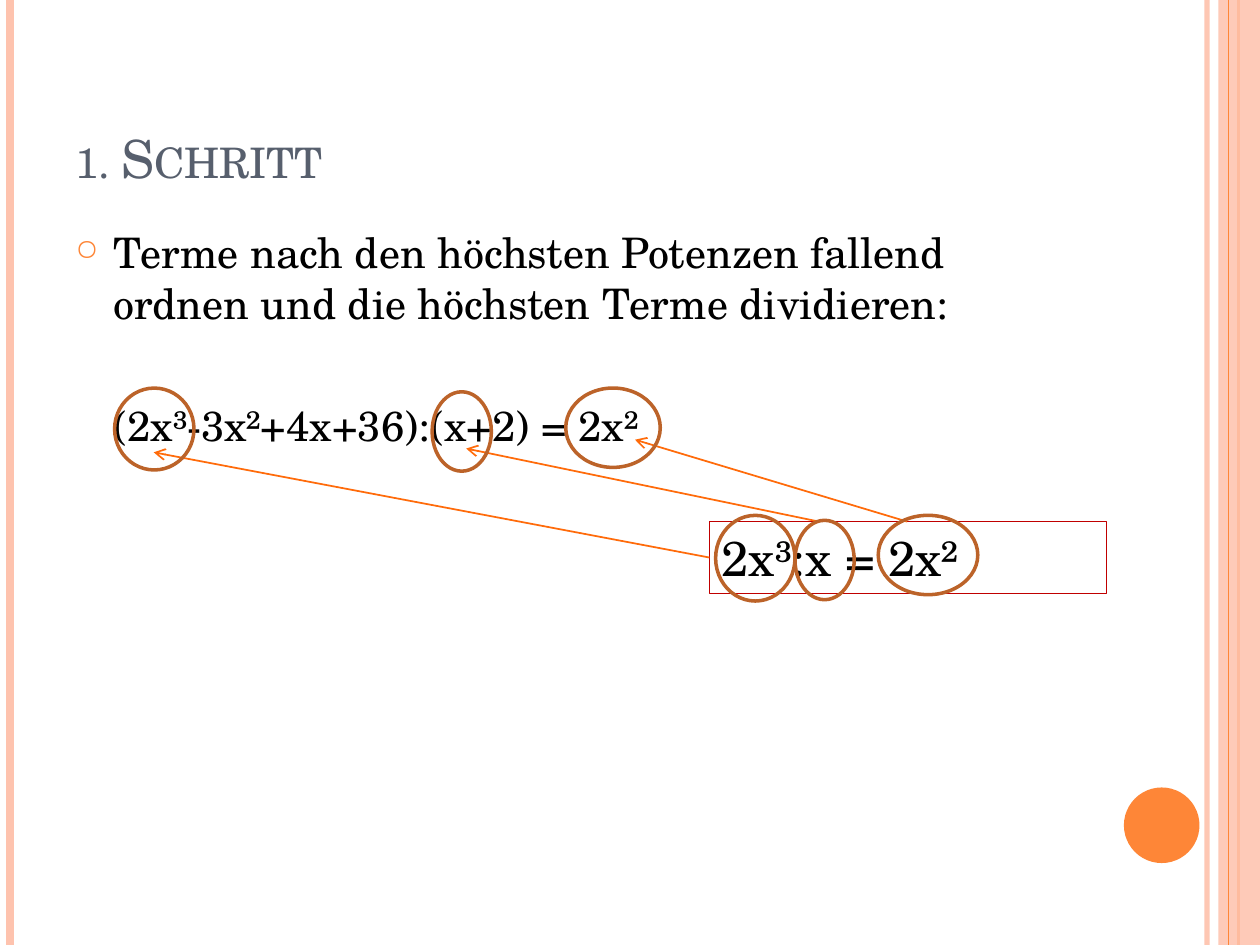
import pptx
import pptx.util
import pptx.dml.color
import pptx.enum.shapes
import pptx.enum.text
import pptx.oxml.ns
from lxml import etree

Inches, Pt = pptx.util.Inches, pptx.util.Pt
SHAPE = pptx.enum.shapes.MSO_SHAPE
ANCHOR = pptx.enum.text.MSO_ANCHOR
LEFT = pptx.enum.text.PP_ALIGN.LEFT
qn = pptx.oxml.ns.qn

FONT = "TeX Gyre Schola"
COLORS = {"peach": "FEC3AE", "orange": "FE8637", "slate": "575F6D", "black": "000000",
          "red": "C00000", "arrow": "FF6B0A", "ring": "BC6329"}

TITLE = "1. Schritt"
INSTRUCTION = "Terme nach den höchsten Potenzen fallend ordnen und die höchsten Terme dividieren:"
DIVISION = "(2x³-3x²+4x+36):(x+2) = 2x²"
FIRST_STEP = "2x³:x = 2x²"

# x, colour, width in points, opacity in percent
STRIPES = [(9.58, "peach", 3, 93), (0.08, "peach", 4.5, 100), (9.83, "orange", 1.5, 100)]
INNER_STRIPE = (9.75, "orange", 0.75, 100)
# start, end
ARROWS = [((5.63, 4.43), (1.22, 3.59)),
          ((6.5, 4.14), (3.7, 3.56)),
          ((7.2, 4.14), (5.04, 3.49))]
# left, top, width, height: each term in the division, then in the first step
RINGS = [(0.91, 3.08, 0.63, 0.65), (5.68, 4.09, 0.63, 0.68),
         (3.43, 3.11, 0.47, 0.63), (6.31, 4.13, 0.47, 0.63),
         (4.49, 3.08, 0.75, 0.63), (6.97, 4.09, 0.79, 0.63)]


def rgb(name):
    return pptx.dml.color.RGBColor.from_string(COLORS[name])


def set_opacity(parent, percent):
    color = next(parent.iter(qn("a:srgbClr")))
    etree.SubElement(color, qn("a:alpha"), val=str(percent * 1000))


def add_line(start, end, color, width, opacity=100, arrow=False):
    line = slide.shapes.add_connector(pptx.enum.shapes.MSO_CONNECTOR.STRAIGHT,
                                      *map(Inches, start + end))
    line.line.color.rgb = rgb(color)
    line.line.width = Pt(width)
    properties = line.line._get_or_add_ln()
    if opacity < 100:
        set_opacity(properties, opacity)
    if arrow:
        etree.SubElement(properties, qn("a:tailEnd"), type="arrow")
    etree.SubElement(line._element.spPr, qn("a:effectLst"))
    return line


def add_stripe(x, color, width, opacity):
    add_line((x, 0), (x, 7.5), color, width, opacity)


def add_shape(kind, place, fill=None, line=None, width=0.75):
    shape = slide.shapes.add_shape(kind, *map(Inches, place))
    shape.shadow.inherit = False
    if fill:
        shape.fill.solid()
        shape.fill.fore_color.rgb = rgb(fill)
    else:
        shape.fill.background()
    if line:
        shape.line.color.rgb = rgb(line)
        shape.line.width = Pt(width)
    else:
        shape.line.fill.background()
    return shape


def write(para, text, size, color="black"):
    para.text = text
    para.alignment = LEFT
    para.font.name = FONT
    para.font.size = Pt(size)
    para.font.color.rgb = rgb(color)


deck = pptx.Presentation()
deck.slide_width, deck.slide_height = Inches(10), Inches(7.5)
slide = deck.slides.add_slide(deck.slide_layouts[5])

# Decorated margins
for stripe in STRIPES:
    add_stripe(*stripe)
band = add_shape(SHAPE.RECTANGLE, (9.67, 0, 0.33, 7.5), fill="peach")
set_opacity(band._element.spPr, 87)
add_stripe(*INNER_STRIPE)
add_shape(SHAPE.OVAL, (8.92, 6.25, 0.6, 0.6), fill="orange")

# Title in small capitals
title = slide.shapes.title
title.left, title.top, title.width, title.height = map(Inches, (0.5, 0.3, 8.17, 1.25))
title.text_frame.vertical_anchor = ANCHOR.BOTTOM
heading = title.text_frame.paragraphs[0]
write(heading, TITLE, 30, "slate")
heading.runs[0].font._element.set("cap", "small")

# Instruction with bullet, division below it on the same indent
body = slide.shapes.add_textbox(*map(Inches, (0.5, 1.75, 8.17, 5.33)))
body.text_frame.word_wrap = True
instruction = body.text_frame.paragraphs[0]
division = body.text_frame.add_paragraph()
for para, text, gap, hanging in ((instruction, INSTRUCTION, 6, -0.3),
                                 (division, DIVISION, 41, 0)):
    write(para, text, 24)
    para.space_before = Pt(gap)
    properties = para._p.get_or_add_pPr()
    properties.set("marL", str(Inches(0.3)))
    properties.set("indent", str(Inches(hanging)))
bullet = instruction._p.get_or_add_pPr()
marks = [etree.Element(qn("a:buClr")), etree.Element(qn("a:buSzPct"), val="70000"),
         etree.Element(qn("a:buChar"), char="○")]
etree.SubElement(marks[0], qn("a:srgbClr"), val=COLORS["orange"])
for mark in marks:
    bullet.find(qn("a:defRPr")).addprevious(mark)

# First step in its frame
step = add_shape(SHAPE.RECTANGLE, (5.63, 4.14, 3.15, 0.57), line="red")
step.text_frame.word_wrap = True
step.text_frame.vertical_anchor = ANCHOR.TOP
write(step.text_frame.paragraphs[0], FIRST_STEP, 28)

# Arrows from the step's terms to the division's terms
arrows = [add_line(start, end, "arrow", 1, arrow=True) for start, end in ARROWS]
arrows[0].begin_connect(step, 1)

# Rings around matching terms
for place in RINGS:
    add_shape(SHAPE.OVAL, place, line="ring", width=2)

deck.save("out.pptx")
